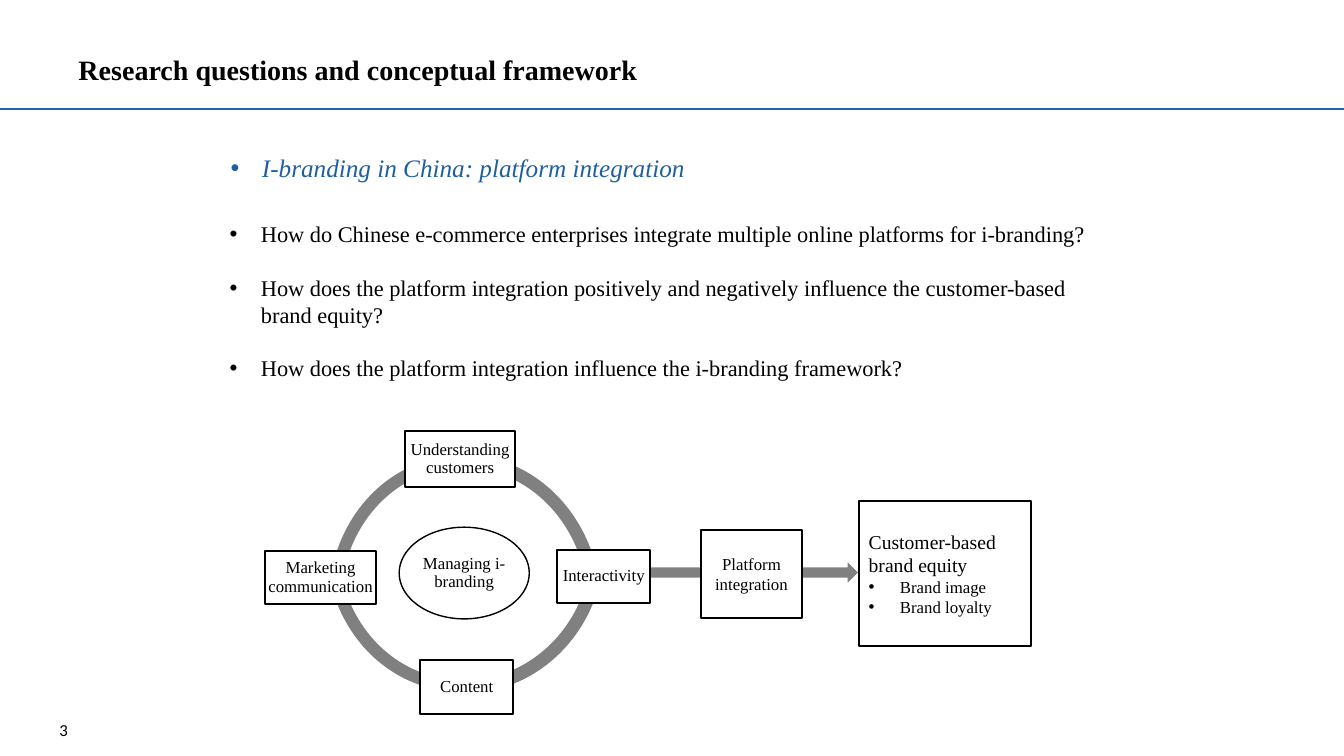
"""Build the slide on research questions and the i-branding framework."""
from dataclasses import dataclass

from lxml.etree import SubElement
from pptx import Presentation
from pptx.dml.color import RGBColor
from pptx.enum.shapes import MSO_CONNECTOR, MSO_SHAPE
from pptx.enum.text import MSO_ANCHOR, PP_ALIGN
from pptx.oxml.ns import qn
from pptx.util import Emu, Inches, Pt

COLORS = {"ink": "000000", "paper": "FFFFFF", "ring": "808080",
          "rule": "1A66B1", "lead": "1F5FA0"}
SERIF = "Times New Roman"
WIDTH, HEIGHT = Inches(13.33), Inches(7.5)
INDENT = Inches(0.31)


@dataclass(frozen=True)
class Area:
    """A rectangle in percent of the slide's width and height."""
    x: float
    y: float
    w: float
    h: float

    def emu(self) -> tuple[Emu, Emu, Emu, Emu]:
        return (Emu(int(WIDTH * self.x / 100)), Emu(int(HEIGHT * self.y / 100)),
                Emu(int(WIDTH * self.w / 100)), Emu(int(HEIGHT * self.h / 100)))


@dataclass(frozen=True)
class Para:
    """One paragraph with a single run."""
    text: str
    size: float = 12
    bullet: bool = False
    bold: bool = False
    italic: bool = False
    color: str = "ink"
    font: str = SERIF
    align: PP_ALIGN = PP_ALIGN.LEFT
    spacing: float = 1.0
    before: float = 0


@dataclass(frozen=True)
class Text:
    """A free text box."""
    area: Area
    paras: tuple[Para, ...]
    anchor: MSO_ANCHOR = MSO_ANCHOR.TOP


@dataclass(frozen=True)
class Node:
    """An outlined shape with text."""
    area: Area
    paras: tuple[Para, ...]
    kind: MSO_SHAPE = MSO_SHAPE.RECTANGLE
    fill: str | None = "paper"
    line: float = 1.5
    inset: float = 0.02


@dataclass(frozen=True)
class Arc:
    """A part of the ring, clockwise between two angles in degrees."""
    area: Area
    start: float
    end: float


def label(text: str, spacing: float = 0.9) -> tuple[Para, ...]:
    return (Para(text, align=PP_ALIGN.CENTER, spacing=spacing),)


def question(text: str, before: float = 19) -> Para:
    return Para(text, 16, bullet=True, before=before)


TEXTS = (
    Text(Area(1.5, 94.53, 4.28, 4.13),
         (Para("3", font="Calibri", align=PP_ALIGN.RIGHT),), MSO_ANCHOR.MIDDLE),
    Text(Area(5.1, 1.73, 74.03, 12.53),
         (Para("Research questions and conceptual framework", 20, bold=True,
               spacing=1.5),), MSO_ANCHOR.MIDDLE),
    Text(Area(16.43, 19.47, 67.13, 5.33),
         (Para("I-branding in China: platform integration", 18, bullet=True,
               italic=True, color="lead"),)),
    Text(Area(16.35, 28.53, 67.13, 22.93), (
        question("How do Chinese e-commerce enterprises integrate multiple "
                 "online platforms for i-branding?", 0),
        question("How does the platform integration positively and negatively "
                 "influence the customer-based brand equity?"),
        question("How does the platform integration influence the i-branding "
                 "framework?"))),
)
ARCS = (
    Arc(Area(24.45, 60.27, 19.73, 38.8), 189.9, 269.54),
    Arc(Area(24.23, 52.4, 19.88, 39.07), 87.08, 166.39),
    Arc(Area(24, 52.13, 21, 39.6), 13.23, 88.89),
    Arc(Area(24.08, 60.13, 20.63, 40.13), 269.07, 349.66),
)
ARROW = Area(48.45, 74.4, 15.38, 2.67)
NODES = (
    Node(Area(29.7, 69.73, 9.68, 12.13), label("Managing i-branding"),
         MSO_SHAPE.OVAL, None, 1),
    Node(Area(30.15, 57.07, 8.18, 7.33), label("Understanding customers")),
    Node(Area(41.48, 72.8, 6.9, 6.93), label("Interactivity")),
    Node(Area(31.28, 87.33, 6.9, 7.07), label("Content")),
    Node(Area(19.73, 72.93, 8.25, 6.93), label("Marketing communication")),
    Node(Area(52.13, 70.13, 7.58, 11.6), label("Platform integration", 1),
         inset=0.1),
    Node(Area(63.9, 66.27, 12.83, 19.2),
         (Para("Customer-based", 14), Para("brand equity", 14),
          Para("Brand image", bullet=True), Para("Brand loyalty", bullet=True)),
         inset=0.1),
)


def rgb(name: str) -> RGBColor:
    return RGBColor.from_string(COLORS[name])


def write(tf, paras: tuple[Para, ...], anchor: MSO_ANCHOR) -> None:
    tf.word_wrap = True
    tf.vertical_anchor = anchor
    for i, para in enumerate(paras):
        p = tf.add_paragraph() if i else tf.paragraphs[0]
        p.alignment = para.align
        p.line_spacing = para.spacing
        p.space_before = Pt(para.before)
        if para.bullet:
            pr = p._p.get_or_add_pPr()
            pr.set("marL", str(INDENT))
            pr.set("indent", str(-INDENT))
            SubElement(pr, qn("a:buFont")).set("typeface", "Arial")
            SubElement(pr, qn("a:buChar")).set("char", "•")
        r = p.add_run()
        r.text = para.text
        r.font.name = para.font
        r.font.size = Pt(para.size)
        r.font.bold = para.bold
        r.font.italic = para.italic
        r.font.color.rgb = rgb(para.color)


def add_rule(s, y: float) -> None:
    x, top, w, _ = Area(0, y, 100, 0).emu()
    line = s.shapes.add_connector(MSO_CONNECTOR.STRAIGHT, x, top, x + w, top)
    line.line.color.rgb = rgb("rule")
    line.line.width = Pt(1)
    SubElement(line._element.spPr, qn("a:effectLst"))


def add_solid(s, kind: MSO_SHAPE, area: Area):
    sp = s.shapes.add_shape(kind, *area.emu())
    sp.shadow.inherit = False
    sp.fill.solid()
    sp.fill.fore_color.rgb = rgb("ring")
    sp.line.fill.background()
    return sp


def add_arc(s, arc: Arc) -> None:
    sp = add_solid(s, MSO_SHAPE.BLOCK_ARC, arc.area)
    for i, value in enumerate((arc.start * 0.6, arc.end * 0.6, 0.046)):
        sp.adjustments[i] = value


def add_node(s, node: Node) -> None:
    sp = s.shapes.add_shape(node.kind, *node.area.emu())
    sp.shadow.inherit = False
    if node.fill:
        sp.fill.solid()
        sp.fill.fore_color.rgb = rgb(node.fill)
    else:
        sp.fill.background()
    sp.line.color.rgb = rgb("ink")
    sp.line.width = Pt(node.line)
    tf = sp.text_frame
    tf.margin_left = tf.margin_right = Inches(node.inset)
    tf.margin_top = tf.margin_bottom = Inches(0.02)
    write(tf, node.paras, MSO_ANCHOR.MIDDLE)


def main() -> None:
    prs = Presentation()
    prs.slide_width, prs.slide_height = WIDTH, HEIGHT
    s = prs.slides.add_slide(prs.slide_layouts[6])
    add_rule(s, 14.4)
    for text in TEXTS:
        write(s.shapes.add_textbox(*text.area.emu()).text_frame, text.paras, text.anchor)
    for arc in ARCS:
        add_arc(s, arc)
    add_solid(s, MSO_SHAPE.RIGHT_ARROW, ARROW)
    for node in NODES:
        add_node(s, node)
    prs.save("out.pptx")


if __name__ == "__main__":
    main()
